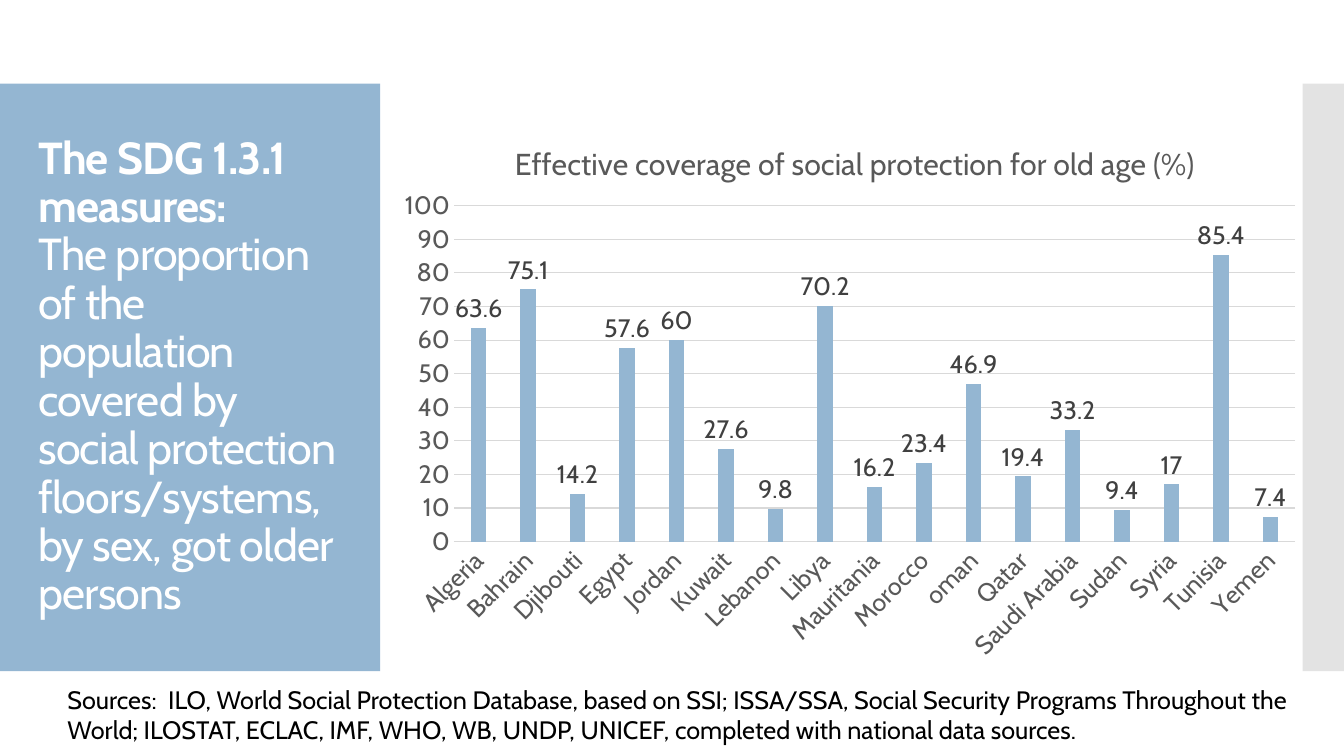
from copy import deepcopy
from typing import NamedTuple

from lxml import etree
from pptx import Presentation, util as u
from pptx.chart import data
from pptx.dml.color import RGBColor
from pptx.enum import chart as ch, shapes, text
from pptx.oxml import ns

PX = 9144
FONT = "Cabin"
BLUE = RGBColor(0x94, 0xB6, 0xD2)
SILVER = RGBColor(0xC8, 0xC8, 0xC8)
GRID = RGBColor(0xD9, 0xD9, 0xD9)
GREY = RGBColor(0x59, 0x59, 0x59)
DARK = RGBColor(0x40, 0x40, 0x40)
BLACK = RGBColor(0, 0, 0)
WHITE = RGBColor(0xFF, 0xFF, 0xFF)


class Area(NamedTuple):
    left: int
    top: int
    width: int
    height: int

    def emu(self) -> list[u.Emu]:
        return [u.Emu(side * PX) for side in self]


class Panel(NamedTuple):
    area: Area
    color: RGBColor
    opacity: int


PANELS = [
    Panel(Area(0, 83, 377, 583), BLUE, 100),
    Panel(Area(1292, 83, 42, 583), SILVER, 50),
]
HEADING = Area(28, 123, 322, 503)
CHART = Area(386, 108, 917, 565)
SOURCES = Area(57, 674, 1253, 71)

COVERAGE = {
    "Algeria": 63.6, "Bahrain": 75.1, "Djibouti": 14.2, "Egypt": 57.6,
    "Jordan": 60, "Kuwait": 27.6, "Lebanon": 9.8, "Libya": 70.2,
    "Mauritania": 16.2, "Morocco": 23.4, "oman": 46.9, "Qatar": 19.4,
    "Saudi Arabia": 33.2, "Sudan": 9.4, "Syria": 17, "Tunisia": 85.4,
    "Yemen": 7.4,
}


def style(font, *, size: float, color: RGBColor, bold: bool = False) -> None:
    font.name = FONT
    font.size = u.Pt(size)
    font.bold = bold
    font.color.rgb = color


def write(para, words: str, *, spacing: int = 0, ends_line: bool = False, **look) -> None:
    span = para.add_run()
    span.text = words
    style(span.font, **look)
    properties = span.font._element
    if spacing:
        properties.set("spc", str(spacing))
    if ends_line:
        para.add_line_break()
        para._p.findall(ns.qn("a:br"))[-1].append(deepcopy(properties))


def draw_panel(page, panel: Panel) -> None:
    shape = page.shapes.add_shape(shapes.MSO_SHAPE.RECTANGLE, *panel.area.emu())
    shape.shadow.inherit = False
    shape.line.fill.background()
    shape.fill.solid()
    shape.fill.fore_color.rgb = panel.color
    if panel.opacity < 100:
        color = shape._element.spPr.find(".//" + ns.qn("a:srgbClr"))
        etree.SubElement(color, ns.qn("a:alpha"), val=str(panel.opacity * 1000))


def draw_heading(page) -> None:
    title = page.shapes.title
    title.left, title.top, title.width, title.height = HEADING.emu()
    frame = title.text_frame
    frame.word_wrap = True
    frame.auto_size = text.MSO_AUTO_SIZE.NONE
    frame.vertical_anchor = text.MSO_ANCHOR.MIDDLE
    para = frame.paragraphs[0]
    para.alignment = text.PP_ALIGN.LEFT
    para.line_spacing = 0.9
    look = {"size": 32, "color": WHITE, "spacing": -60}
    write(para, "The SDG 1.3.1 measures:", bold=True, ends_line=True, **look)
    write(para, "The proportion of the population covered by social protection "
          "floors/systems, by sex, got older persons", **look)


def set_layout(parent, index: int, **places: float | str) -> None:
    for old in parent.findall(ns.qn("c:layout")):
        parent.remove(old)
    layout = etree.Element(ns.qn("c:layout"))
    manual = etree.SubElement(layout, ns.qn("c:manualLayout"))
    for name, value in places.items():
        etree.SubElement(manual, ns.qn(f"c:{name}"), val=str(value))
    parent.insert(index, layout)


def draw_chart(page) -> None:
    table = data.CategoryChartData()
    table.categories = list(COVERAGE)
    table.add_series("Series 1", list(COVERAGE.values()))
    chart = page.shapes.add_chart(
        ch.XL_CHART_TYPE.COLUMN_CLUSTERED, *CHART.emu(), table).chart
    style(chart.font, size=18, color=BLACK)
    chart.has_legend = False
    chart.has_title = True
    write(chart.chart_title.text_frame.paragraphs[0],
          "Effective coverage of social protection for old age (%)",
          size=21.6, color=GREY)
    chart.chart_title.include_in_layout = False

    plot = chart.plots[0]
    plot.gap_width, plot.overlap = 219, -27
    plot.vary_by_categories = False
    series = plot.series[0]
    series.format.fill.solid()
    series.format.fill.fore_color.rgb = BLUE
    plot.has_data_labels = True
    labels = plot.data_labels
    labels.show_value = True
    labels.position = ch.XL_LABEL_POSITION.OUTSIDE_END
    style(labels.font, size=18, color=DARK)

    countries, percent = chart.category_axis, chart.value_axis
    for axis in (countries, percent):
        axis.major_tick_mark = axis.minor_tick_mark = ch.XL_TICK_MARK.NONE
        style(axis.tick_labels.font, size=18, color=GREY)
    percent.minimum_scale, percent.maximum_scale, percent.major_unit = 0, 100, 10
    percent.format.line.fill.background()
    percent.has_major_gridlines = True
    for line in (countries.format.line, percent.major_gridlines.format.line):
        line.color.rgb = GRID
        line.width = u.Pt(0.75)

    root = chart._chartSpace
    root.find(".//" + ns.qn("c:catAx")).find(".//" + ns.qn("a:bodyPr")).set("rot", "-2700000")
    set_layout(root.find(".//" + ns.qn("c:title")), 1,
               xMode="edge", yMode="edge", x=0.13, y=0.05)
    set_layout(root.find(".//" + ns.qn("c:plotArea")), 0, layoutTarget="inner",
               xMode="edge", yMode="edge", x=0.07, y=0.17, w=0.91, h=0.59)


def draw_sources(page) -> None:
    box = page.shapes.add_textbox(*SOURCES.emu())
    frame = box.text_frame
    frame.word_wrap = True
    frame.auto_size = text.MSO_AUTO_SIZE.SHAPE_TO_FIT_TEXT
    write(frame.paragraphs[0],
          "Sources:\tILO, World Social Protection Database, based on SSI; ISSA/SSA, "
          "Social Security Programs Throughout the World; ILOSTAT, ECLAC, IMF, WHO, "
          "WB, UNDP, UNICEF, completed with national data sources.",
          size=18, color=BLACK)


def main() -> None:
    deck = Presentation()
    deck.slide_width, deck.slide_height = u.Emu(1333 * PX), u.Emu(750 * PX)
    page = deck.slides.add_slide(deck.slide_layouts.get_by_name("Title Only"))
    for panel in PANELS:
        draw_panel(page, panel)
    tree = page.shapes._spTree
    tree.append(page.shapes.title._element)
    draw_heading(page)
    draw_chart(page)
    draw_sources(page)
    deck.save("out.pptx")


if __name__ == "__main__":
    main()
